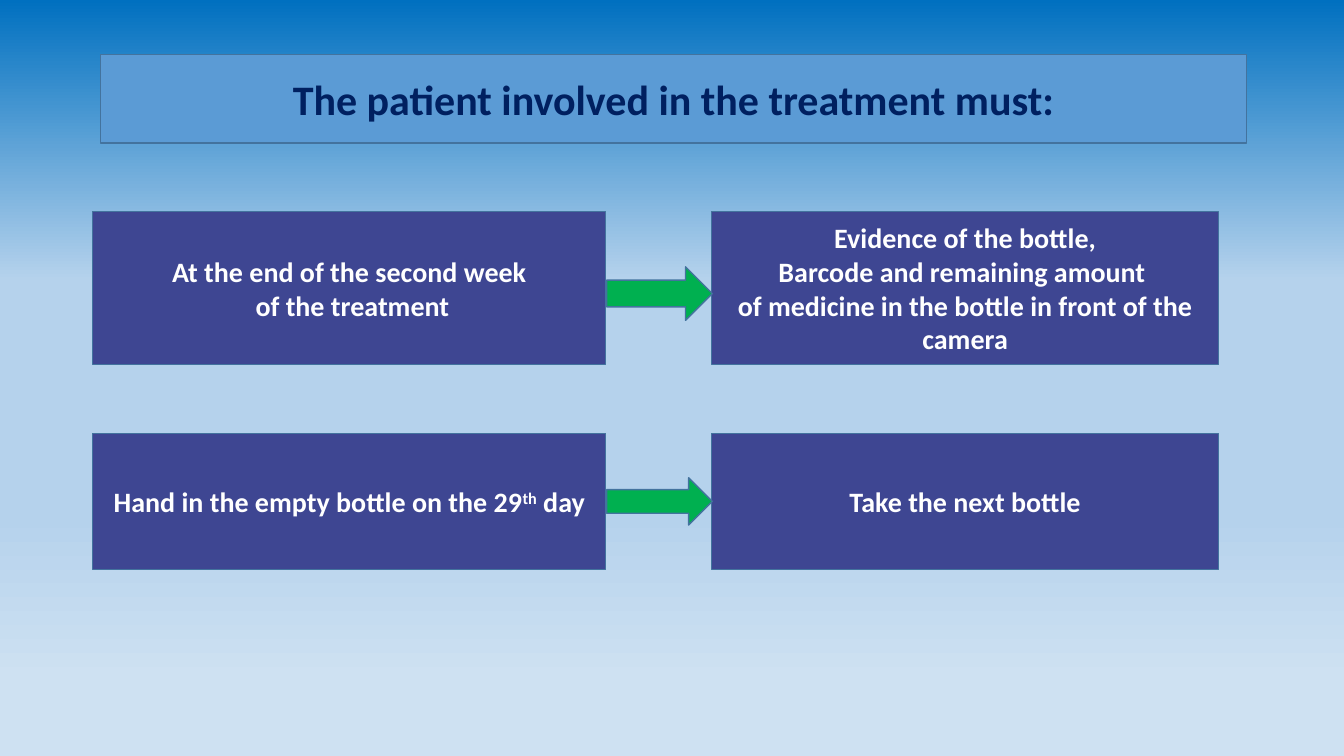
"""Build the slide on what the patient involved in the treatment must do."""
from copy import deepcopy
from dataclasses import dataclass

from pptx import Presentation
from pptx import util as u
from pptx.dml.color import RGBColor
from pptx.enum import shapes, text
from pptx.oxml.ns import qn
from pptx.shapes.autoshape import Shape
from pptx.slide import Slide


@dataclass(frozen=True)
class Theme:
    """Colours and type sizes of the slide."""

    font: str = "Calibri"
    title_size: float = 30
    step_size: float = 20
    title_text: str = "002060"
    title_fill: str = "5B9BD5"
    step_text: str = "FFFFFF"
    step_fill: str = "3E4692"
    arrow_fill: str = "00B050"
    outline: str = "43739E"
    background: tuple[tuple[int, str], ...] = (
        (0, "0070C0"), (37, "B5D2EC"), (40, "B5D2EC"), (68, "B5D2EC"), (90, "CEE1F2"),
    )


@dataclass(frozen=True)
class Box:
    """A rectangle in points."""

    left: float
    top: float
    width: float
    height: float


@dataclass(frozen=True)
class Step:
    """A row of two boxes joined by an arrow; ^marks^ enclose superscripts."""

    top: float
    height: float
    arrow_top: float
    arrow_height: float
    condition: tuple[str, ...]
    action: tuple[str, ...]


THEME = Theme()
TITLE_BOX = Box(72, 38.9, 818.6, 63.4)
CONDITION_LEFT, CONDITION_WIDTH = 66.25, 366.5
ARROW_LEFT, ARROW_WIDTH = 433.3, 75.5
ACTION_LEFT, ACTION_WIDTH = 508.3, 362.2
STEPS = (
    Step(151.2, 109.2, 190.6, 38.2,
         ("At the end of the second week", " of the treatment"),
         ("Evidence of the bottle,", "Barcode and remaining amount ",
          "of medicine in the bottle in front of the camera")),
    Step(309.6, 97.2, 341.3, 33.8,
         ("Hand in the empty bottle on the 29^th^ day",),
         ("Take the next bottle",)),
)


def paint_background(slide: Slide) -> None:
    """Fill the background with a gradient from top to bottom."""
    fill = slide.background.fill
    fill.gradient()
    fill.gradient_angle = 270
    stop_list = slide.element.find(".//" + qn("a:gsLst"))
    while len(stop_list) < len(THEME.background):
        stop_list.append(deepcopy(stop_list[0]))
    for stop, (position, colour) in zip(fill.gradient_stops, THEME.background):
        stop.position = position / 100
        stop.color.rgb = RGBColor.from_string(colour)


def format_shape(shape: Shape, fill: str) -> None:
    """Give a shape its fill and the common outline."""
    shape.fill.solid()
    shape.fill.fore_color.rgb = RGBColor.from_string(fill)
    shape.line.color.rgb = RGBColor.from_string(THEME.outline)
    shape.line.width = u.Pt(1)


def write_text(shape: Shape, lines: tuple[str, ...], *, size: float, colour: str) -> None:
    """Write bold centred paragraphs, raising the parts between carets."""
    frame = shape.text_frame
    frame.word_wrap = True
    frame.auto_size = text.MSO_AUTO_SIZE.NONE
    frame.vertical_anchor = text.MSO_ANCHOR.MIDDLE
    for number, line in enumerate(lines):
        paragraph = frame.add_paragraph() if number else frame.paragraphs[0]
        paragraph.alignment = text.PP_ALIGN.CENTER
        paragraph.line_spacing = 1.0
        for index, part in enumerate(line.split("^")):
            run = paragraph.add_run()
            run.text = part
            run.font.name = THEME.font
            run.font.size = u.Pt(size)
            run.font.bold = True
            run.font.color.rgb = RGBColor.from_string(colour)
            if index % 2:
                run.font._element.set("baseline", "30000")


def add_block(slide: Slide, kind: shapes.MSO_SHAPE, box: Box, fill: str) -> Shape:
    """Add a preset shape without a shadow."""
    shape = slide.shapes.add_shape(
        kind, u.Pt(box.left), u.Pt(box.top), u.Pt(box.width), u.Pt(box.height))
    shape.shadow.inherit = False
    format_shape(shape, fill)
    return shape


def add_title(slide: Slide, title: str) -> None:
    """Place and format the title placeholder."""
    shape = slide.shapes.title
    shape.left, shape.top = u.Pt(TITLE_BOX.left), u.Pt(TITLE_BOX.top)
    shape.width, shape.height = u.Pt(TITLE_BOX.width), u.Pt(TITLE_BOX.height)
    format_shape(shape, THEME.title_fill)
    write_text(shape, (title,), size=THEME.title_size, colour=THEME.title_text)


def add_step(slide: Slide, step: Step) -> None:
    """Draw the two boxes of a step and the arrow between them."""
    for left, width, lines in (
        (CONDITION_LEFT, CONDITION_WIDTH, step.condition),
        (ACTION_LEFT, ACTION_WIDTH, step.action),
    ):
        box = Box(left, step.top, width, step.height)
        shape = add_block(slide, shapes.MSO_SHAPE.RECTANGLE, box, THEME.step_fill)
        write_text(shape, lines, size=THEME.step_size, colour=THEME.step_text)
    arrow = Box(ARROW_LEFT, step.arrow_top, ARROW_WIDTH, step.arrow_height)
    add_block(slide, shapes.MSO_SHAPE.RIGHT_ARROW, arrow, THEME.arrow_fill)


def main() -> None:
    """Build and save the presentation."""
    presentation = Presentation()
    presentation.slide_width, presentation.slide_height = u.Pt(960), u.Pt(540)
    slide = presentation.slides.add_slide(presentation.slide_layouts.get_by_name("Title Only"))
    paint_background(slide)
    add_title(slide, "The patient involved in the treatment must:")
    for step in STEPS:
        add_step(slide, step)
    presentation.save("out.pptx")


if __name__ == "__main__":
    main()
